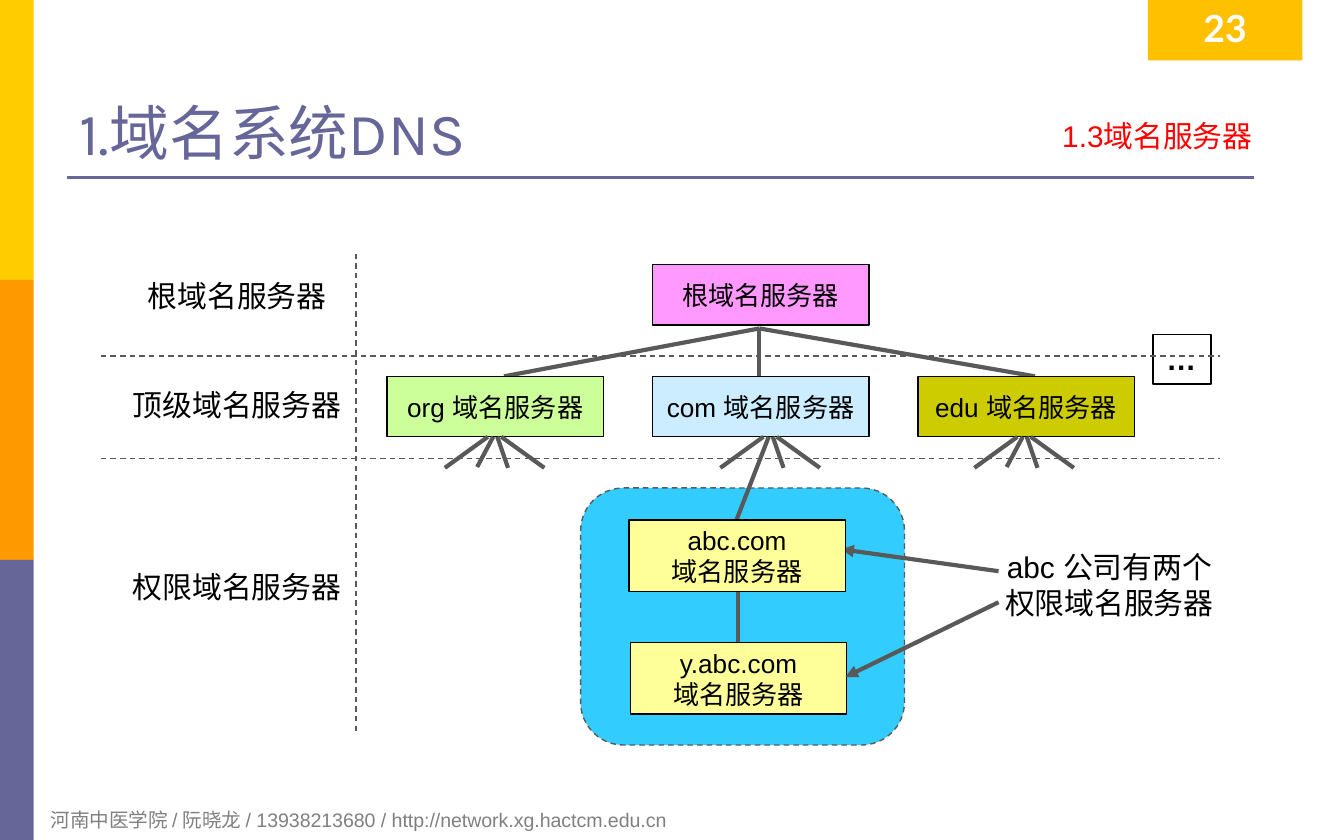
from lxml import etree
from pptx import Presentation
from pptx.dml.color import RGBColor
from pptx.enum.dml import MSO_LINE
from pptx.enum.shapes import MSO_CONNECTOR, MSO_SHAPE
from pptx.enum.text import MSO_ANCHOR, PP_ALIGN
from pptx.oxml.ns import qn
from pptx.util import Inches, Pt

LEFT, CENTER, RIGHT = PP_ALIGN.LEFT, PP_ALIGN.CENTER, PP_ALIGN.RIGHT
TOP, MIDDLE, BOTTOM = MSO_ANCHOR.TOP, MSO_ANCHOR.MIDDLE, MSO_ANCHOR.BOTTOM
RECT, ROUNDED = MSO_SHAPE.RECTANGLE, MSO_SHAPE.ROUNDED_RECTANGLE
STRAIGHT, DASH = MSO_CONNECTOR.STRAIGHT, MSO_LINE.DASH

# The slide is a grid of 100 columns and 100 rows
SLIDE_W, SLIDE_H = Inches(10), Inches(6.25)
SERVER_W, SERVER_H, HOST_H = 16.1, 7.2, 8.5
TLD_LEFT, TLD_STEP, TLD_ROW = 28.8, 19.75, 44.8

COLORS = {
    "yellow": "FFCC00", "orange": "FF9900", "violet": "666699",
    "amber": "FFC000", "white": "FFFFFF", "black": "000000",
    "red": "FF0000", "footer": "808080", "link": "595959",
    "root": "FF99FF", "org": "CCFF99", "com": "CCECFF", "edu": "CCCC00",
    "zone": "33CCFF", "host": "FFFF99",
}


def color(name):
    return RGBColor.from_string(COLORS[name])


def place(col, row, width, height):
    return (round(SLIDE_W * col / 100), round(SLIDE_H * row / 100),
            round(SLIDE_W * width / 100), round(SLIDE_H * height / 100))


def write(shape, text, size, ink="black", font="Arial", align=CENTER,
          anchor=MIDDLE, bold=False, wrap=False, tight=False):
    frame = shape.text_frame
    frame.word_wrap = wrap
    frame.vertical_anchor = anchor
    if tight:
        frame.margin_left = frame.margin_right = Inches(0.09)
        frame.margin_top = frame.margin_bottom = Inches(0.04)
    frame.text = text
    for paragraph in frame.paragraphs:
        paragraph.alignment = align
        paragraph.font.name = font
        paragraph.font.size = Pt(size)
        paragraph.font.bold = bold
        paragraph.font.color.rgb = color(ink)


def add_label(slide, area, text, size, **style):
    write(slide.shapes.add_textbox(*place(*area)), text, size, **style)


def add_block(slide, area, fill=None, outline=None, kind=RECT):
    block = slide.shapes.add_shape(kind, *place(*area))
    block.shadow.inherit = False
    if fill:
        block.fill.solid()
        block.fill.fore_color.rgb = color(fill)
    else:
        block.fill.background()
    if outline:
        block.line.color.rgb = color(outline)
        block.line.width = Pt(0.75)
    else:
        block.line.fill.background()
    return block


def add_server(slide, col, row, text, fill, height=SERVER_H):
    server = add_block(slide, (col, row, SERVER_W, height), fill, "black")
    write(server, text, 14)


def add_line(slide, start, end, ink="link", width=2.25, dashed=False, arrow=False):
    line = slide.shapes.add_connector(
        STRAIGHT, *place(*start, 0, 0)[:2], *place(*end, 0, 0)[:2])
    line.line.color.rgb = color(ink)
    line.line.width = Pt(width)
    if dashed:
        line.line.dash_style = DASH
    if arrow:
        etree.SubElement(line.line._get_or_add_ln(), qn("a:tailEnd"), type="triangle")
    etree.SubElement(line._element.spPr, qn("a:effectLst"))


def add_frame(slide):
    # Side bars, title rule and footer
    for index, fill in enumerate(("yellow", "orange", "violet")):
        add_block(slide, (0, index * 100 / 3, 2.5, 100 / 3), fill)
    add_line(slide, (5, 21.1), (93.3, 21.1), "violet", 1.5)
    add_label(slide, (2.8, 95.4, 67.7, 4.5),
              "河南中医学院 / 阮晓龙 / 13938213680 / http://network.xg.hactcm.edu.cn",
              10.5, ink="footer", align=LEFT, anchor=TOP, wrap=True)

    # Title, page number and section
    add_label(slide, (5, 4, 90, 16.64), "1.域名系统DNS", 32, ink="violet",
              font="Karla", align=LEFT, anchor=BOTTOM, wrap=True, tight=True)
    page_number = add_block(slide, (85.4, 0, 11.5, 7.2), "amber")
    write(page_number, "23", 20, ink="white", font="Lato", anchor=TOP,
          bold=True, tight=True)
    add_label(slide, (62.6, 13.4, 31.5, 6.2), "1.3域名服务器", 16, ink="red",
              align=RIGHT, anchor=TOP, wrap=True, tight=True)


def add_fan(slide, center, last_end):
    top = TLD_ROW + SERVER_H
    for start, end in ((0.5, 3.7), (0.2, 1), (-0.5, -3.7)):
        add_line(slide, (center + start, top), (center + end, 55.7))
    add_line(slide, (center - 0.1, top), last_end)


def add_tree(slide):
    # Zone of the company's servers
    zone = add_block(slide, (43.2, 58.1, 24.1, 30.6), "zone", "link", ROUNDED)
    zone.line.dash_style = DASH

    # Root and top-level servers
    for col in (37.5, 56.5, 77):
        add_line(slide, (56.5, 39.1), (col, TLD_ROW))
    add_server(slide, TLD_LEFT + TLD_STEP, 31.5, "根域名服务器", "root")
    fans = (("org", 36.8, (35.5, 55.6)), ("com", 57.3, (54.8, 61.9)),
            ("edu", 76.2, (74.9, 55.6)))
    for index, (domain, center, last_end) in enumerate(fans):
        add_server(slide, TLD_LEFT + index * TLD_STEP, TLD_ROW,
                   f"{domain} 域名服务器", domain)
        add_fan(slide, center, last_end)
    more = add_block(slide, (85.8, 39.8, 4.3, 5.9), outline="black")
    write(more, "…", 16, align=LEFT, anchor=TOP, bold=True)

    # Authoritative servers and their note
    add_line(slide, (54.9, 69.1), (54.9, 76.5))
    add_server(slide, 46.9, 76.5, "y.abc.com\n域名服务器", "host", HOST_H)
    add_line(slide, (74.3, 68), (62.6, 65.4), arrow=True)
    add_line(slide, (74.3, 71.7), (62.9, 80.6), arrow=True)
    add_server(slide, 46.8, 61.9, "abc.com\n域名服务器", "host", HOST_H)
    add_label(slide, (73.6, 64.5, 17.9, 10.2), "abc 公司有两个\n权限域名服务器",
              16, anchor=TOP)


def add_levels(slide):
    # Level names and dashed dividers
    for row, level in ((32.3, "根"), (45.3, "顶级"), (66.9, "权限")):
        add_label(slide, (8.8, row, 17.7, 5.9), f"{level}域名服务器", 16, anchor=TOP)
    for row in (42.4, 54.6):
        add_line(slide, (7.5, row), (90.8, row), width=0.75, dashed=True)
    add_line(slide, (26.5, 30.2), (26.5, 87.4), width=0.75, dashed=True)


def main():
    deck = Presentation()
    deck.slide_width, deck.slide_height = SLIDE_W, SLIDE_H
    slide = deck.slides.add_slide(deck.slide_layouts[6])
    add_frame(slide)
    add_tree(slide)
    add_levels(slide)
    deck.save("out.pptx")


if __name__ == "__main__":
    main()
